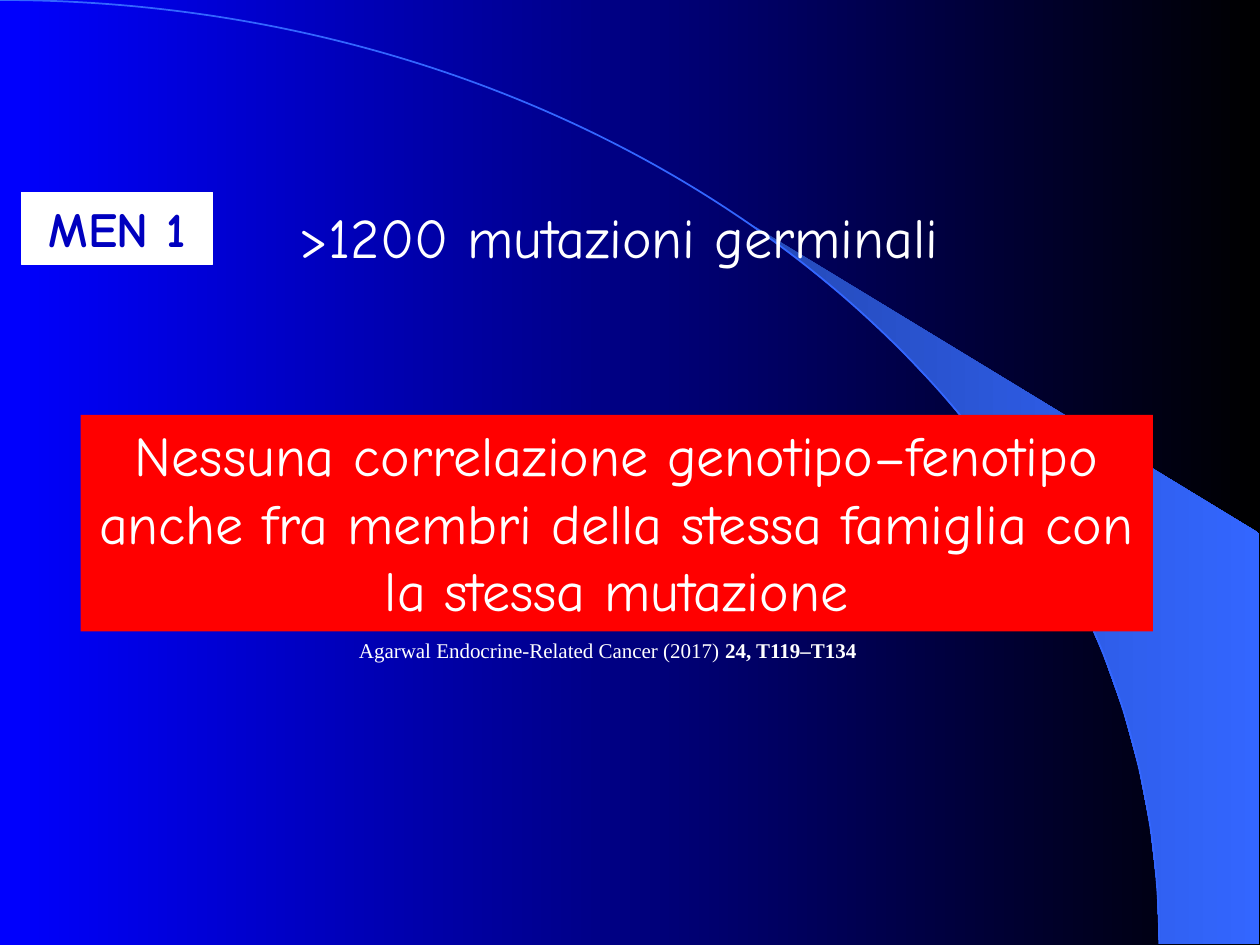
import math

import lxml.etree
import pptx
import pptx.util
import pptx.dml.color
import pptx.enum.shapes
import pptx.enum.text
import pptx.oxml.ns

Pt = pptx.util.Pt
RGB = pptx.dml.color.RGBColor.from_string
qn = pptx.oxml.ns.qn
MSO = pptx.enum.text
COLORS = {"blue": "0000FF", "black": "000000", "arc": "3366FF", "glow": "2449B6",
          "red": "FF0000", "white": "FFFFFF", "navy": "0000BF"}

prs = pptx.Presentation()
prs.slide_width, prs.slide_height = Pt(720), Pt(540)
s = prs.slides.add_slide(prs.slide_layouts[6])


def set_gradient(fill, start, end):
    """Fill from left to right with two colours."""
    fill.gradient()
    fill.gradient_angle = 0
    for stop, position, name in zip(fill.gradient_stops, (0, 1), (start, end)):
        stop.position = position
        stop.color.rgb = RGB(COLORS[name])


def add_outline(points, close):
    points = [(Pt(x), Pt(y)) for x, y in points]
    builder = s.shapes.build_freeform(*points[0], scale=1.0)
    builder.add_line_segments(points[1:], close=close)
    sp = builder.convert_to_shape()
    sp.shadow.inherit = False
    return sp


set_gradient(s.background.fill, "blue", "black")

# The beam lies between the lower part of a quarter ellipse and the right edge
RX, RY, STEPS = 662.4, 539.3, 14
tip = math.asin(0.64)
angles = [tip + (math.pi / 2 - tip) * i / STEPS for i in range(STEPS + 1)]
edge = [(RX * math.sin(a), RY * (1 - math.cos(a))) for a in angles]
beam = add_outline([(719.3, RY), (719.3, 304.6)] + edge, True)
set_gradient(beam.fill, "glow", "arc")
beam.line.fill.background()

# The whole quarter ellipse is one Bézier segment
curve = add_outline([(0, 0), (RX, RY)], False)
segment = next(curve._element.iter(qn("a:lnTo")))
segment.tag = qn("a:cubicBezTo")
for i, (x, y) in enumerate([(0.552 * RX, 0), (RX, 0.448 * RY)]):
    control = lxml.etree.Element(qn("a:pt"), x=str(Pt(x)), y=str(Pt(y)))
    segment.insert(i, control)
curve.fill.background()
curve.line.color.rgb = RGB(COLORS["arc"])
curve.line.width = Pt(1)

# box (left, top, width, height), fill, line, wrap, anchor, alignment, font, runs (text, bold)
top, middle = MSO.MSO_ANCHOR.TOP, MSO.MSO_ANCHOR.MIDDLE
left, center = MSO.PP_ALIGN.LEFT, MSO.PP_ALIGN.CENTER
comic, times = "Comic Neue", "Times New Roman"
blocks = [
    ((46.1, 237, 612.7, 123.8), "red", None, True, top, center, (comic, 32, "white"),
     [("Nessuna correlazione genotipo–fenotipo anche fra membri della stessa "
       "famiglia con la stessa mutazione", False)]),
    ((12.2, 110, 109.4, 41), "white", "white", False, top, center, (comic, 28, "navy"),
     [("MEN 1", True)]),
    ((131, 112.3, 455.8, 46), None, None, True, top, center, (comic, 32, "white"),
     [(">1200 mutazioni germinali ", False)]),
    ((198, 360.8, 308.9, 21.8), None, None, True, middle, left, (times, 12, "white"),
     [("Agarwal Endocrine-Related Cancer (2017) ", False), ("24, T119–T134", True)]),
]
for box, fill, line, wrap, anchor, align, (font, size, color), runs in blocks:
    box = [Pt(v) for v in box]
    if fill:
        sp = s.shapes.add_shape(pptx.enum.shapes.MSO_SHAPE.RECTANGLE, *box)
        sp.shadow.inherit = False
        sp.fill.solid()
        sp.fill.fore_color.rgb = RGB(COLORS[fill])
        if line:
            sp.line.color.rgb = RGB(COLORS[line])
            sp.line.width = Pt(0.75)
        else:
            sp.line.fill.background()
    else:
        sp = s.shapes.add_textbox(*box)
    tf = sp.text_frame
    frame = {"word_wrap": wrap, "vertical_anchor": anchor,
             "auto_size": MSO.MSO_AUTO_SIZE.SHAPE_TO_FIT_TEXT}
    for key, value in frame.items():
        setattr(tf, key, value)
    p = tf.paragraphs[0]
    p.alignment = align
    for text, bold in runs:
        r = p.add_run()
        r.text = text
        r.font.color.rgb = RGB(COLORS[color])
        for key, value in {"name": font, "size": Pt(size), "bold": bold}.items():
            setattr(r.font, key, value)

prs.save("out.pptx")
